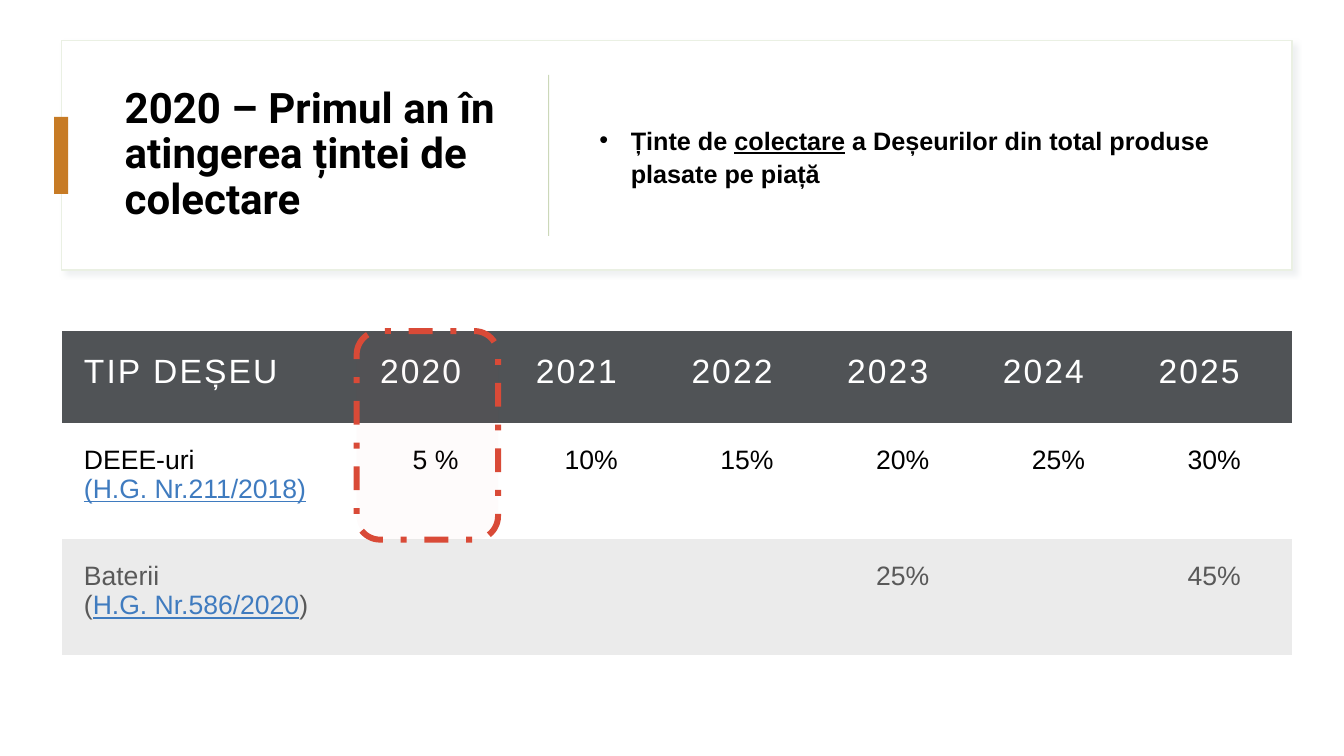
from lxml import etree
from pptx import Presentation
from pptx.dml.color import RGBColor
from pptx.enum.dml import MSO_LINE
from pptx.enum.shapes import MSO_SHAPE
from pptx.enum.text import MSO_ANCHOR, PP_ALIGN
from pptx.oxml.ns import qn
from pptx.util import Pt

RECTANGLE, ROUNDED = MSO_SHAPE.RECTANGLE, MSO_SHAPE.ROUNDED_RECTANGLE
MIDDLE, CENTER, DASH_DOT = MSO_ANCHOR.MIDDLE, PP_ALIGN.CENTER, MSO_LINE.DASH_DOT

BLACK = RGBColor(0x00, 0x00, 0x00)
WHITE = RGBColor(0xFF, 0xFF, 0xFF)
CARD_EDGE = RGBColor(0xEA, 0xF0, 0xE3)
ORANGE = RGBColor(0xC7, 0x7B, 0x25)
DIVIDER = RGBColor(0xCC, 0xD8, 0xB9)
HEADER = RGBColor(0x50, 0x53, 0x56)
BAND = RGBColor(0xEB, 0xEB, 0xEB)
GREY = RGBColor(0x59, 0x59, 0x59)
LINK = RGBColor(0x3F, 0x7B, 0xBF)
RED = RGBColor(0xD9, 0x4A, 0x37)

# Content: runs are (text, is underlined)
TITLE = "2020 – Primul an în atingerea țintei de colectare"
TARGETS = [("Ținte de ", False), ("colectare", True),
           (" a Deșeurilor din total produse plasate pe piață", False)]
YEARS = ["2020", "2021", "2022", "2023", "2024", "2025"]
WASTE_ROWS = [
    ([[("DEEE-uri", False)], [("(H.G. Nr.211/2018)", True)]],
     ["5 %", "10%", "15%", "20%", "25%", "30%"], BLACK, None),
    ([[("Baterii", False)], [("(", False), ("H.G. Nr.586/2020", True), (")", False)]],
     ["", "", "", "25%", "", "45%"], GREY, BAND),
]

# Layout in points
LEFT, WIDTH = 44, 879
TABLE_TOP, HEADER_HEIGHT, ROW_HEIGHT = 236.5, 65.5, 83
NAME_WIDTH = 211.5
YEAR_WIDTH = (WIDTH - NAME_WIDTH) / len(YEARS)
CELL_MARGIN = Pt(16)
NO_GRID_STYLE = "{2D5ABB26-0587-4C30-8999-92F81FD0307C}"


def add_run(paragraph, text, size, color, font="Arial", bold=False, underline=False):
    run = paragraph.add_run()
    run.text = text
    run.font.name, run.font.size = font, Pt(size)
    run.font.bold, run.font.underline = bold, underline
    run.font.color.rgb = color
    return run


def add_block(slide, preset, left, top, width, height, fill):
    shape = slide.shapes.add_shape(preset, Pt(left), Pt(top), Pt(width), Pt(height))
    shape.shadow.inherit = False
    shape.fill.solid()
    shape.fill.fore_color.rgb = fill
    shape.line.fill.background()
    return shape


def add_text_area(slide, left, top, width, height):
    box = slide.shapes.add_textbox(Pt(left), Pt(top), Pt(width), Pt(height))
    box.text_frame.word_wrap = True
    box.text_frame.vertical_anchor = MIDDLE
    return box.text_frame.paragraphs[0]


def add_alpha(color_element, percent):
    etree.SubElement(color_element, qn("a:alpha"), val=str(percent * 1000))


def prepare_cell(cell, fill):
    cell.margin_left = cell.margin_right = CELL_MARGIN
    cell.margin_top = cell.margin_bottom = CELL_MARGIN
    if fill is None:
        cell.fill.background()
    else:
        cell.fill.solid()
        cell.fill.fore_color.rgb = fill
    return cell.text_frame


def add_heading(slide):
    # Card with soft shadow
    card = add_block(slide, RECTANGLE, LEFT, 29, WIDTH, 164, WHITE)
    card.line.color.rgb = CARD_EDGE
    card.line.width = Pt(1)
    effects = card._element.spPr.find(qn("a:effectLst"))
    shadow = etree.SubElement(effects, qn("a:outerShdw"), blurRad=str(Pt(4)),
                              dist=str(Pt(3)), dir="2700000", rotWithShape="0")
    shadow_color = etree.SubElement(shadow, qn("a:srgbClr"), val="C8CFD3")
    add_alpha(shadow_color, 30)

    # Title, accent and divider
    title = add_text_area(slide, 82, 46, 279, 130)
    title.line_spacing = 0.9
    add_run(title, TITLE, 30, BLACK, "Roboto", bold=True)
    add_block(slide, RECTANGLE, 38.75, 83.5, 10, 55, ORANGE)
    add_block(slide, RECTANGLE, 391.5, 53.5, 0.75, 115, DIVIDER)

    # Bulleted statement
    statement = add_text_area(slide, 421, 46, 472, 130)
    statement.line_spacing = 1.1
    statement.space_before = Pt(10)
    properties = statement._p.get_or_add_pPr()
    properties.set("marL", str(Pt(22.5)))
    properties.set("indent", str(Pt(-22.5)))
    etree.SubElement(properties, qn("a:buFont"), typeface="Arial")
    etree.SubElement(properties, qn("a:buChar"), char="•")
    for text, underline in TARGETS:
        add_run(statement, text, 18, BLACK, bold=True, underline=underline)


def add_targets_table(slide):
    height = HEADER_HEIGHT + ROW_HEIGHT * len(WASTE_ROWS)
    table = slide.shapes.add_table(len(WASTE_ROWS) + 1, len(YEARS) + 1, Pt(LEFT),
                                   Pt(TABLE_TOP), Pt(WIDTH), Pt(height)).table
    table.first_row = table.horz_banding = False
    table._tbl.tblPr.find(qn("a:tableStyleId")).text = NO_GRID_STYLE
    for index, column in enumerate(table.columns):
        column.width = Pt(YEAR_WIDTH if index else NAME_WIDTH)
    for index, row in enumerate(table.rows):
        row.height = Pt(ROW_HEIGHT if index else HEADER_HEIGHT)

    # Header row
    for column, label in enumerate(["TIP DEȘEU"] + YEARS):
        frame = prepare_cell(table.cell(0, column), HEADER)
        run = add_run(frame.paragraphs[0], label, 24, WHITE)
        run.font._element.set("spc", "150")

    # Waste rows
    for row, (name_lines, values, color, fill) in enumerate(WASTE_ROWS, 1):
        frame = prepare_cell(table.cell(row, 0), fill)
        for index, line in enumerate(name_lines):
            paragraph = frame.add_paragraph() if index else frame.paragraphs[0]
            for text, is_link in line:
                add_run(paragraph, text, 19, LINK if is_link else color, underline=is_link)
        for column, value in enumerate(values, 1):
            paragraph = prepare_cell(table.cell(row, column), fill).paragraphs[0]
            paragraph.alignment = CENTER
            if value:
                add_run(paragraph, value, 19, color)


def add_year_highlight(slide):
    highlight = add_block(slide, ROUNDED, LEFT + NAME_WIDTH - 0.75, TABLE_TOP, 101, 149, RED)
    add_alpha(highlight._element.spPr.find(qn("a:solidFill"))[0], 2)
    highlight.line.color.rgb = RED
    highlight.line.width = Pt(4.25)
    highlight.line.dash_style = DASH_DOT


def main():
    presentation = Presentation()
    presentation.slide_width, presentation.slide_height = Pt(960), Pt(540)
    slide = presentation.slides.add_slide(presentation.slide_layouts[6])
    add_heading(slide)
    add_targets_table(slide)
    add_year_highlight(slide)
    presentation.save("out.pptx")


if __name__ == "__main__":
    main()
